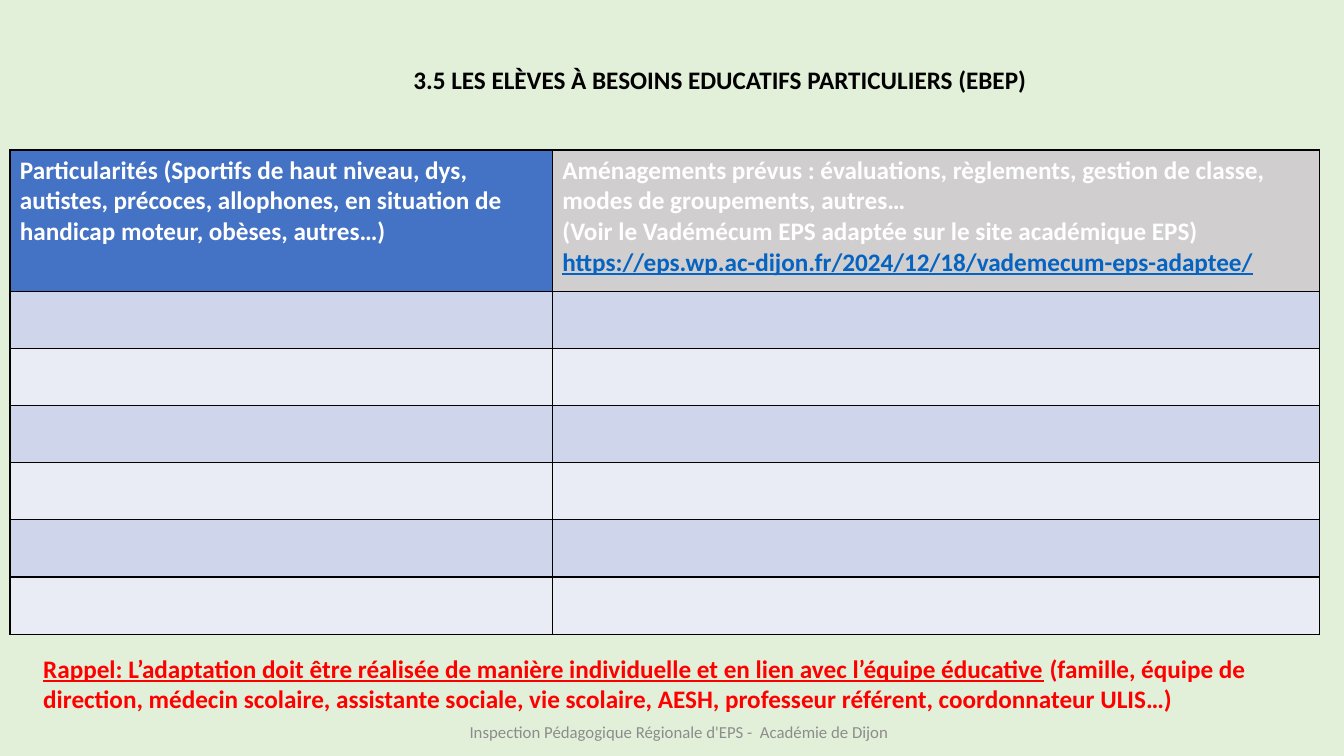
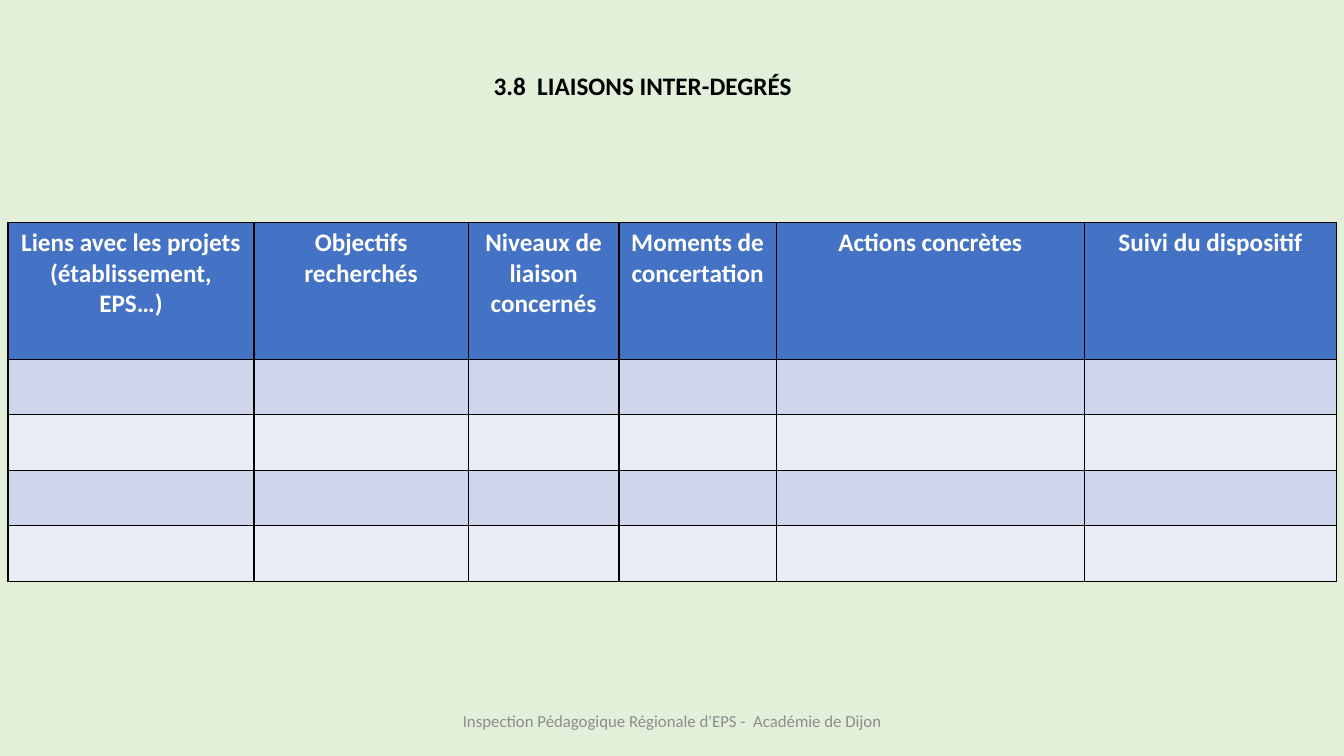
"""Build two slides of an EPS project: pupils with special needs and school liaison."""
from dataclasses import dataclass

from lxml import etree
from pptx import Presentation
from pptx.dml.color import RGBColor
from pptx.enum.text import MSO_ANCHOR, PP_ALIGN
from pptx.oxml.ns import qn
from pptx.util import Cm, Pt


@dataclass(frozen=True)
class Theme:
    font: str = "Calibri"
    background: str = "E2F0D9"
    ink: str = "000000"
    white: str = "FFFFFF"
    alert: str = "FF0000"
    link: str = "0563C1"
    muted: str = "8C8C8C"
    header: str = "4472C4"
    header_grey: str = "D0CECE"
    bands: tuple = ("CFD5EA", "E9EBF5")
    body_size: int = 18
    footer_size: int = 12
    border: int = 1


theme = Theme()
TITLE = {"color": theme.ink, "size": theme.body_size, "bold": True}
HEADER = {**TITLE, "color": theme.white}
REMINDER = {**TITLE, "color": theme.alert}
FOOTER = {"color": theme.muted, "size": theme.footer_size, "bold": False}
LINK = {"color": theme.link, "underline": True}
UNDERLINE = {"underline": True}


def write(tf, paragraphs, style, align):
    tf.word_wrap = True
    for i, runs in enumerate(paragraphs):
        p = tf.add_paragraph() if i else tf.paragraphs[0]
        p.alignment = align
        for text, changes in runs:
            r = p.add_run()
            r.text = text
            r.font.name = theme.font
            for name, value in {**style, **changes}.items():
                if name == "color":
                    r.font.color.rgb = RGBColor.from_string(value)
                else:
                    setattr(r.font, name, Pt(value) if name == "size" else value)


slides = [
    {
        "texts": [
            ((3.07, 1.5, 30.15, 1), TITLE, PP_ALIGN.CENTER,
             [[("3.5 LES ELÈVES À BESOINS EDUCATIFS PARTICULIERS (EBEP)", {})]]),
            ((0.84, 16.33, 32.21, 1.8), REMINDER, PP_ALIGN.LEFT,
             [[("Rappel: L’adaptation doit être réalisée de manière individuelle et "
                "en lien avec l’équipe éducative", UNDERLINE),
               (" (famille, équipe de direction, médecin scolaire, assistante sociale, "
                "vie scolaire, AESH, professeur référent, coordonnateur ULIS…)", {})]]),
        ],
        "table_at": (0.25, 3.78),
        "widths": (13.67, 19.33),
        "heights": (3.56, 1.44, 6),
        "align": PP_ALIGN.LEFT,
        "headers": [
            (theme.header,
             [[("Particularités (Sportifs de haut niveau, dys, autistes, précoces, "
                "allophones, en situation de handicap moteur, obèses, autres…)", {})]]),
            (theme.header_grey,
             [[("Aménagements prévus : évaluations, règlements, gestion de classe, "
                "modes de groupements, autres…", {})],
              [("(Voir le Vadémécum EPS adaptée sur le site académique EPS) ", {}),
               ("https://eps.wp.ac-dijon.fr/2024/12/18/vademecum-eps-adaptee/", LINK)]]),
        ],
        "footer_at": (11.4, 17.93),
    },
    {
        "texts": [
            ((12.19, 1.65, 20, 1), TITLE, PP_ALIGN.LEFT,
             [[("3.8  LIAISONS INTER-DEGRÉS", {})]]),
        ],
        "table_at": (0.2, 5.6),
        "widths": (6.2, 5.4, 3.8, 3.96, 7.77, 6.35),
        "heights": (3.45, 1.4, 4),
        "align": PP_ALIGN.CENTER,
        "headers": [
            (theme.header, [[(line, {})] for line in lines])
            for lines in (
                ("Liens avec les projets", "(établissement, EPS…)"),
                ("Objectifs recherchés",),
                ("Niveaux de liaison concernés",),
                ("Moments de concertation",),
                ("Actions concrètes",),
                ("Suivi du dispositif",),
            )
        ],
        "footer_at": (11.23, 17.65),
    },
]

prs = Presentation()
prs.slide_width, prs.slide_height = Cm(33.87), Cm(19.05)
fill = prs.slide_master.background.fill
fill.solid()
fill.fore_color.rgb = RGBColor.from_string(theme.background)

for content in slides:
    s = prs.slides.add_slide(prs.slide_layouts[6])

    head_height, row_height, row_count = content["heights"]
    heights = [head_height] + [row_height] * row_count
    widths = content["widths"]
    table = s.shapes.add_table(
        len(heights), len(widths), *map(Cm, content["table_at"]),
        Cm(sum(widths)), Cm(sum(heights))).table
    table.first_row = table.horz_banding = False
    for column, width in zip(table.columns, widths):
        column.width = Cm(width)
    for i, (row, height) in enumerate(zip(table.rows, heights)):
        row.height = Cm(height)
        for cell, (header_fill, paragraphs) in zip(row.cells, content["headers"]):
            tcPr = cell._tc.get_or_add_tcPr()
            for side in ("a:lnL", "a:lnR", "a:lnT", "a:lnB"):
                ln = etree.SubElement(tcPr, qn(side), w=str(Pt(theme.border)))
                solid = etree.SubElement(ln, qn("a:solidFill"))
                etree.SubElement(solid, qn("a:srgbClr"), val=theme.ink)
            cell.fill.solid()
            color = theme.bands[(i - 1) % 2] if i else header_fill
            cell.fill.fore_color.rgb = RGBColor.from_string(color)
            if i == 0:
                write(cell.text_frame, paragraphs, HEADER, content["align"])

    for box, style, align, paragraphs in content["texts"]:
        sp = s.shapes.add_textbox(*map(Cm, box))
        write(sp.text_frame, paragraphs, style, align)

    sp = s.shapes.add_textbox(*map(Cm, content["footer_at"]), Cm(11.43), Cm(1.02))
    sp.text_frame.vertical_anchor = MSO_ANCHOR.MIDDLE
    write(sp.text_frame, [[("Inspection Pédagogique Régionale d'EPS -  Académie de Dijon", {})]],
          FOOTER, PP_ALIGN.CENTER)

prs.save("out.pptx")
